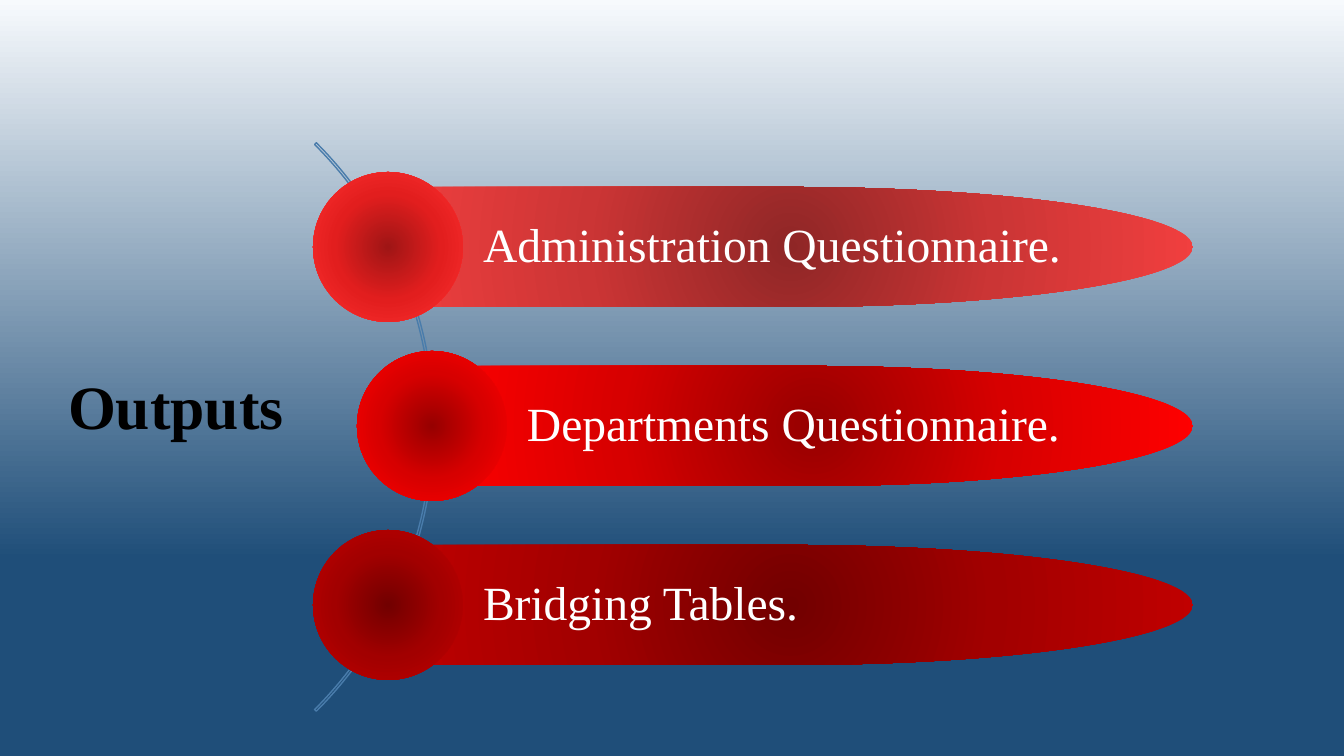
from dataclasses import dataclass

from lxml import etree
from pptx import Presentation
from pptx.dml.color import RGBColor
from pptx.enum.shapes import MSO_SHAPE as Shape
from pptx.enum.text import MSO_ANCHOR as Anchor, PP_ALIGN as Align
from pptx.util import Pt

PX = 12192000 // 1344
DRAWING = "http://schemas.openxmlformats.org/drawingml/2006/main"
RADIAL = ('<a:path path="circle"><a:fillToRect l="50000" t="50000" '
          'r="50000" b="50000"/></a:path>')
DOWNWARD = '<a:lin ang="5400000" scaled="0"/>'


@dataclass(frozen=True)
class Theme:
    font: str = "Times New Roman"
    title_size: int = 44
    label_size: int = 34
    title: str = "000000"
    label: str = "FFFFFF"
    arc: str = "497CAB"
    # Gradient stops: position in percent, colour, opacity in percent
    sky: tuple = ((0, "F7FAFD", 100), (74, "1F4E79", 50), (83, "1F4E79", 100),
                  (100, "1F4E79", 100))
    coral: tuple = ((0, "8F2626", 100), (50, "CB3535", 100), (100, "F13F3F", 100))
    scarlet: tuple = ((0, "9F1515", 100), (50, "E21E1E", 100), (100, "FF3131", 100))
    red: tuple = ((0, "970000", 100), (50, "D70000", 100), (100, "FF0000", 100))
    crimson: tuple = ((0, "720000", 100), (50, "A20000", 100), (100, "C00000", 100))


theme = Theme()


def set_gradient(target, fill, stops, direction):
    """Give target's fill a gradient, by way of an empty fill that is swapped out."""
    fill.background()
    stop_xml = "".join(
        f'<a:gs pos="{position * 1000}"><a:srgbClr val="{color}">'
        f'<a:alpha val="{opacity * 1000}"/></a:srgbClr></a:gs>'
        for position, color, opacity in stops)
    gradient = etree.fromstring(
        f'<a:gradFill xmlns:a="{DRAWING}" rotWithShape="1">'
        f'<a:gsLst>{stop_xml}</a:gsLst>{direction}</a:gradFill>')
    empty_fill = target.element.xpath(".//a:noFill")[0]
    empty_fill.getparent().replace(empty_fill, gradient)


def add_text(box, text, size, color, align, bold=False, left_inset=9):
    textbox = slide.shapes.add_textbox(*(length * PX for length in box))
    frame = textbox.text_frame
    frame.word_wrap = True
    frame.vertical_anchor = Anchor.MIDDLE
    frame.margin_left = left_inset * PX
    frame.margin_right = frame.margin_top = frame.margin_bottom = 9 * PX
    paragraph = frame.paragraphs[0]
    paragraph.text = text
    paragraph.alignment = align
    paragraph.line_spacing = 0.9
    paragraph.font.name = theme.font
    paragraph.font.size = Pt(size)
    paragraph.font.bold = bold
    paragraph.font.color.rgb = RGBColor.from_string(color)


presentation = Presentation()
presentation.slide_width = 1344 * PX
presentation.slide_height = 756 * PX
slide = presentation.slides.add_slide(presentation.slide_layouts[6])
set_gradient(slide, slide.background.fill, theme.sky, DOWNWARD)

add_text((25, 337, 302, 146), "Outputs", theme.title_size, theme.title,
         Align.CENTER, bold=True)

arc = slide.shapes.add_shape(Shape.BLOCK_ARC, -370 * PX, 25 * PX, 804 * PX, 804 * PX)
arc.adjustments[0] = 189
arc.adjustments[1] = 27
arc.adjustments[2] = 0.003
arc.shadow.inherit = False
arc.fill.background()
arc.line.color.rgb = RGBColor.from_string(theme.arc)
arc.line.width = Pt(1)

BAR_RIGHT, BAR_HEIGHT = 1193, 120
LABEL_RIGHT, LABEL_HEIGHT = 1077, 84
CIRCLE = 150
FIRST_CENTER, ROW_PITCH = 247, 179

outputs = (
    ("Administration Questionnaire.", 388, theme.coral, theme.scarlet),
    ("Departments Questionnaire.", 432, theme.red, theme.red),
    ("Bridging Tables.", 388, theme.crimson, theme.crimson),
)
for row, (label, left, bar_stops, circle_stops) in enumerate(outputs):
    center = FIRST_CENTER + row * ROW_PITCH
    bar_box = (left, center - BAR_HEIGHT // 2, BAR_RIGHT - left, BAR_HEIGHT)
    circle_box = (left - CIRCLE // 2, center - CIRCLE // 2, CIRCLE, CIRCLE)
    for kind, box, stops in ((Shape.FLOWCHART_DELAY, bar_box, bar_stops),
                             (Shape.OVAL, circle_box, circle_stops)):
        shape = slide.shapes.add_shape(kind, *(length * PX for length in box))
        shape.shadow.inherit = False
        set_gradient(shape, shape.fill, stops, RADIAL)
        shape.line.fill.background()
    add_text((left, center - LABEL_HEIGHT // 2, LABEL_RIGHT - left, LABEL_HEIGHT),
             label, theme.label_size, theme.label, Align.LEFT, left_inset=95)

presentation.save("out.pptx")
